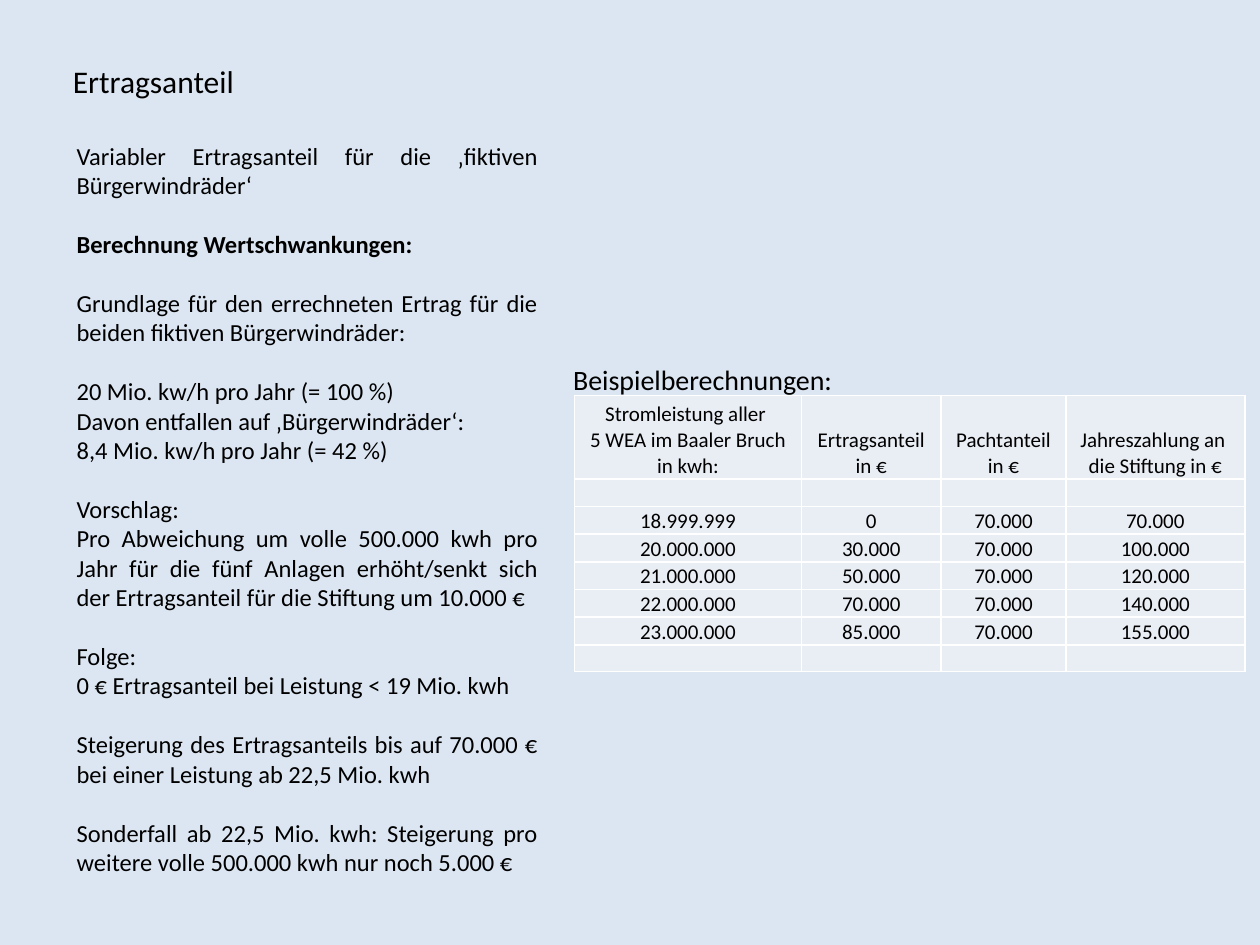
from lxml import etree
from pptx import Presentation
from pptx import util as u
from pptx.dml.color import RGBColor
from pptx.enum import text
from pptx.oxml.ns import qn

SKY = RGBColor(0xDC, 0xE6, 0xF2)
PALE = RGBColor(0xE9, 0xED, 0xF4)
WHITE = RGBColor(0xFF, 0xFF, 0xFF)
BLACK = RGBColor(0, 0, 0)
FONT = "Calibri"
GAP = u.Pt(16.8)  # one line of 14 pt text

# Each block is a list of paragraphs; blocks are one line apart.
BLOCKS = [
    ["Variabler Ertragsanteil für die ‚fiktiven Bürgerwindräder‘"],
    ["Berechnung Wertschwankungen:"],
    ["Grundlage für den errechneten Ertrag für die beiden fiktiven "
     "Bürgerwindräder: "],
    ["20 Mio. kw/h pro Jahr (= 100 %)",
     "Davon entfallen auf ‚Bürgerwindräder‘:",
     "8,4 Mio. kw/h pro Jahr (= 42 %) "],
    ["Vorschlag: ",
     "Pro Abweichung um volle 500.000 kwh pro Jahr für die fünf Anlagen "
     "erhöht/senkt sich der Ertragsanteil für die Stiftung um 10.000 €"],
    ["Folge:", "0 € Ertragsanteil bei Leistung < 19 Mio. kwh"],
    ["Steigerung des Ertragsanteils bis auf 70.000 € bei einer Leistung "
     "ab 22,5 Mio. kwh"],
    ["Sonderfall ab 22,5 Mio. kwh: Steigerung pro weitere volle 500.000 kwh "
     "nur noch 5.000 € "],
]
BOLD = 1  # index of the block set in bold

COLS = [1.8, 1.11, 0.99, 1.42]
ROWS = [0.66] + [0.22] * 6 + [0.21]
EMPTY = [""] * len(COLS)
CELLS = [
    ["Stromleistung aller \n5 WEA im Baaler Bruch\nin kwh:",
     "Ertragsanteil\nin €", "Pachtanteil\nin €",
     "Jahreszahlung an \ndie Stiftung in €"],
    EMPTY,
    ["18.999.999", "0", "70.000", "70.000"],
    ["20.000.000", "30.000", "70.000", "100.000"],
    ["21.000.000", "50.000", "70.000", "120.000"],
    ["22.000.000", "70.000", "70.000", "140.000"],
    ["23.000.000", "85.000", "70.000", "155.000"],
    EMPTY,
]


def add_run(para, words, size, bold=False):
    run = para.add_run()
    run.text = words
    font = run.font
    font.name, font.size, font.bold = FONT, u.Pt(size), bold
    font.color.rgb = BLACK


def add_box(slide, box):
    frame = slide.shapes.add_textbox(*map(u.Inches, box)).text_frame
    frame.word_wrap = True
    return frame


def add_label(slide, box, words, size):
    add_run(add_box(slide, box).paragraphs[0], words, size)


def add_body(slide, box):
    frame = add_box(slide, box)
    for i, block in enumerate(BLOCKS):
        for j, words in enumerate(block):
            first = i == j == 0
            para = frame.paragraphs[0] if first else frame.add_paragraph()
            para.alignment = text.PP_ALIGN.JUSTIFY
            if i and j == 0:
                para.space_before = GAP
            add_run(para, words, 14, i == BOLD)


def add_edges(cell):
    """Draw a white 1 pt line on all four sides; call before the fill."""
    props = cell._tc.get_or_add_tcPr()
    for side in ("a:lnL", "a:lnR", "a:lnT", "a:lnB"):
        line = etree.SubElement(props, qn(side), w=str(u.Pt(1)))
        fill = etree.SubElement(line, qn("a:solidFill"))
        etree.SubElement(fill, qn("a:srgbClr"), val=str(WHITE))


def fill_cell(cell, words):
    add_edges(cell)
    cell.fill.solid()
    cell.fill.fore_color.rgb = PALE
    cell.vertical_anchor = text.MSO_ANCHOR.BOTTOM
    cell.margin_left = cell.margin_right = cell.margin_top = u.Inches(0.01)
    cell.margin_bottom = 0
    para = cell.text_frame.paragraphs[0]
    para.alignment = text.PP_ALIGN.CENTER
    if not words:
        # keeps an empty row from growing to the default text size
        etree.SubElement(para._p, qn("a:endParaRPr"), sz="1200")
        return
    for i, line in enumerate(words.split("\n")):
        if i:
            para.add_line_break()
        add_run(para, line, 12)


def add_grid(slide, left, top):
    box = left, top, sum(COLS), sum(ROWS)
    table = slide.shapes.add_table(
        len(ROWS), len(COLS), *map(u.Inches, box)).table
    table.first_row = table.horz_banding = False
    for col, width in zip(table.columns, COLS):
        col.width = u.Inches(width)
    for row, height, line in zip(table.rows, ROWS, CELLS):
        row.height = u.Inches(height)
        for cell, words in zip(row.cells, line):
            fill_cell(cell, words)


def main():
    deck = Presentation()
    deck.slide_width, deck.slide_height = u.Inches(10), u.Inches(7.5)
    slide = deck.slides.add_slide(deck.slide_layouts[6])
    back = slide.background.fill
    back.solid()
    back.fore_color.rgb = SKY
    add_label(slide, (0.48, 0.44, 3.23, 0.4), "Ertragsanteil", 18)
    add_body(slide, (0.51, 1.07, 3.86, 6.23))
    add_grid(slide, 4.56, 3.14)
    add_label(slide, (4.45, 2.83, 4.65, 0.37), "Beispielberechnungen:", 16)
    deck.save("out.pptx")


if __name__ == "__main__":
    main()
